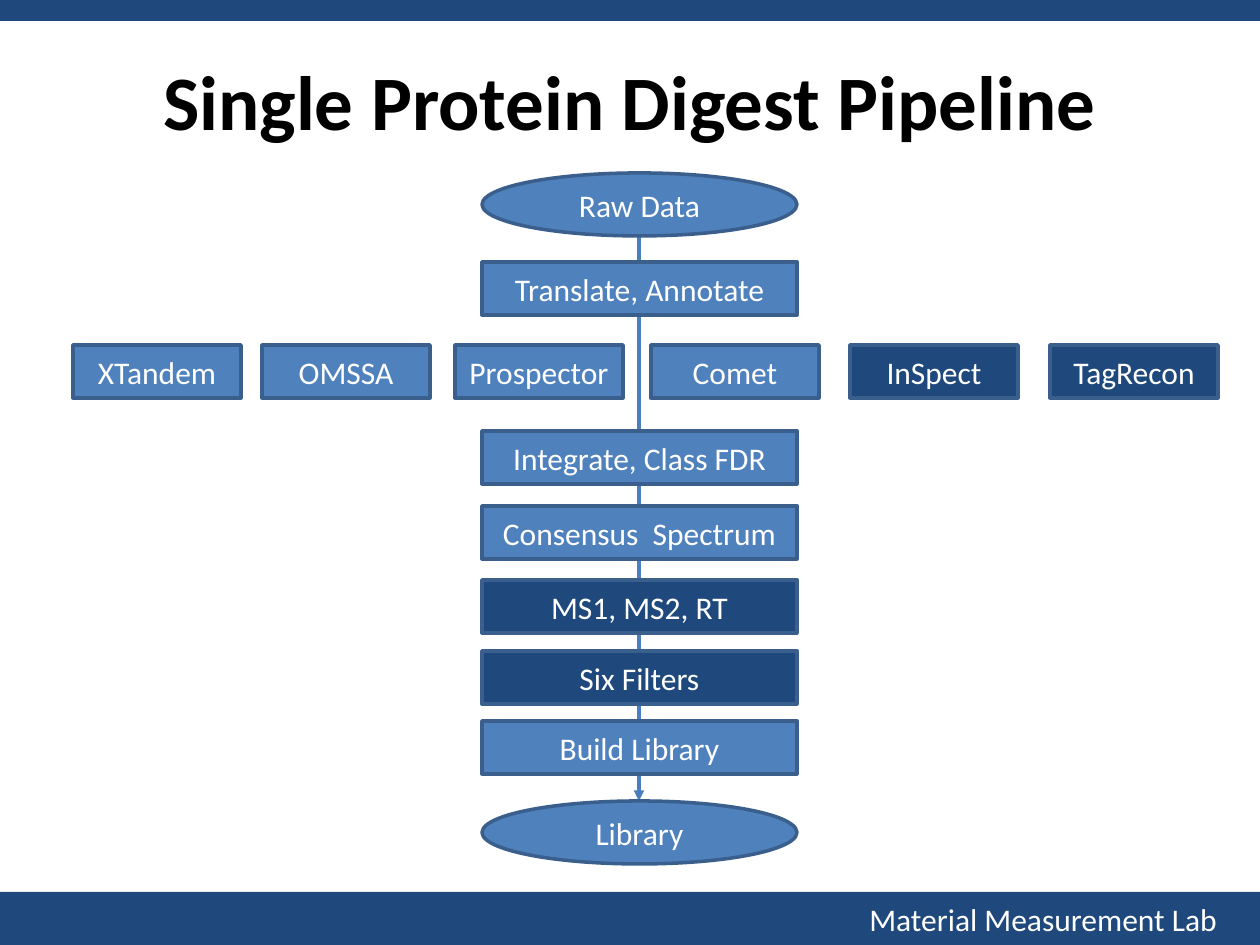
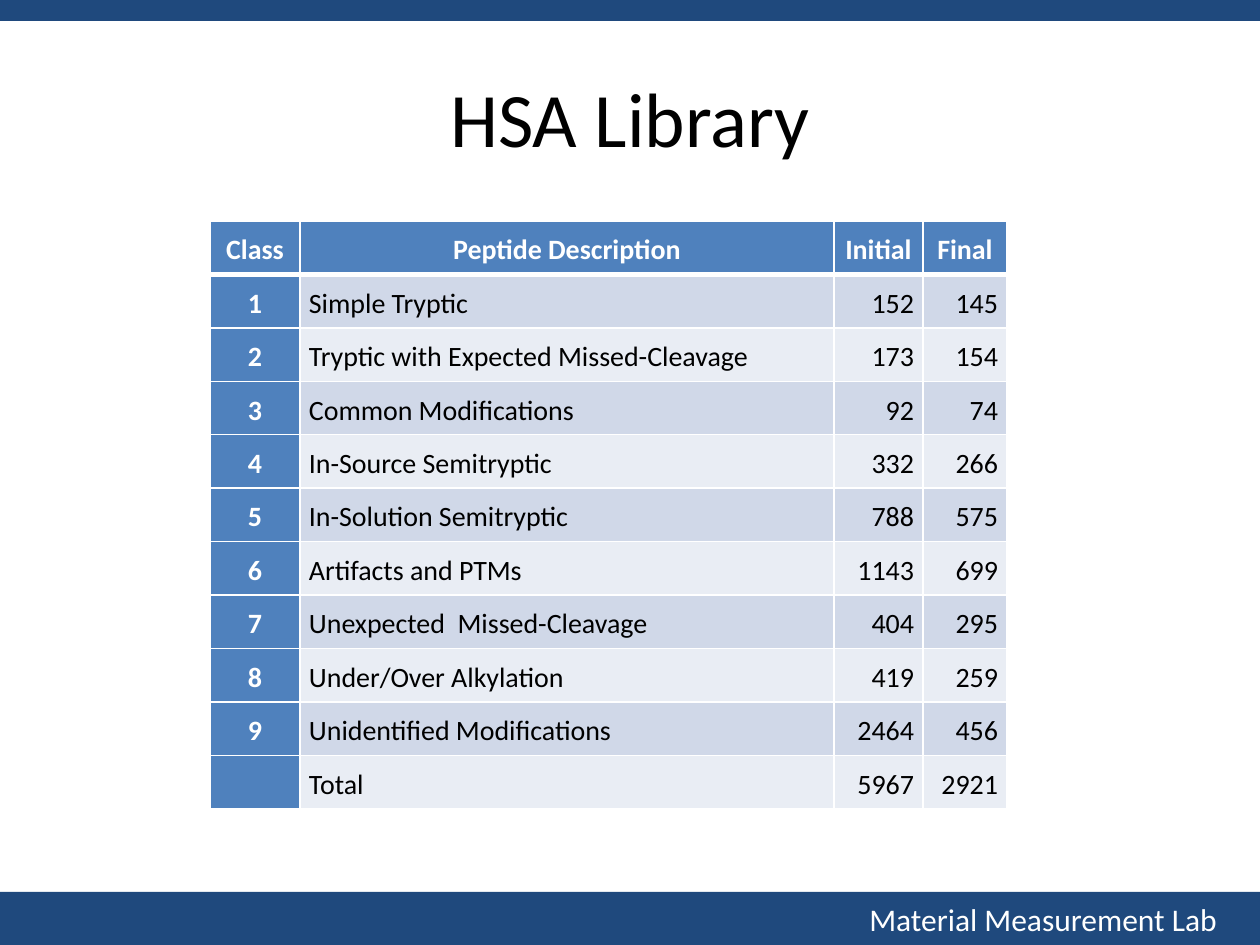
from lxml.etree import SubElement
from pptx import Presentation
from pptx.dml.color import RGBColor
from pptx.enum.shapes import MSO_CONNECTOR, MSO_SHAPE
from pptx.enum.text import MSO_ANCHOR, PP_ALIGN
from pptx.oxml.ns import qn
from pptx.util import Inches, Pt

PX_PER_INCH = 126
SLIDE_WIDTH, SLIDE_HEIGHT = 1260, 945
FONT = "Calibri"

NAVY = RGBColor(0x1F, 0x49, 0x7D)
BLUE = RGBColor(0x4F, 0x81, 0xBD)
OUTLINE = RGBColor(0x3A, 0x5F, 0x8C)
FLOW = RGBColor(0x4B, 0x7E, 0xBC)
ROW_DARK = RGBColor(0xD0, 0xD8, 0xE8)
ROW_LIGHT = RGBColor(0xE9, 0xED, 0xF4)
WHITE = RGBColor(0xFF, 0xFF, 0xFF)
BLACK = RGBColor(0, 0, 0)

STEP_LEFT, STEP_WIDTH, STEP_HEIGHT = 482, 315, 53
ELLIPSE_HEIGHT = 63
RAW_DATA_TOP, LIBRARY_TOP = 173, 801
FLOW_X = 639
STEPS = [
    ("Translate, Annotate", 262, BLUE),
    ("Integrate, Class FDR", 431, BLUE),
    ("Consensus  Spectrum", 506, BLUE),
    ("MS1, MS2, RT", 580, NAVY),
    ("Six Filters", 651, NAVY),
    ("Build Library", 721, BLUE),
]

ENGINE_TOP, ENGINE_WIDTH = 345, 168
ENGINES = [
    ("XTandem", 73, BLUE),
    ("OMSSA", 262, BLUE),
    ("Prospector", 455, BLUE),
    ("Comet", 651, BLUE),
    ("InSpect", 850, NAVY),
    ("TagRecon", 1050, NAVY),
]

COLUMN_WIDTHS = [90, 534, 89, 84]
COLUMN_ALIGNMENTS = [PP_ALIGN.CENTER, PP_ALIGN.LEFT, PP_ALIGN.RIGHT, PP_ALIGN.RIGHT]
PEPTIDE_ROWS = [
    ("Class", "Peptide Description", "Initial", "Final"),
    ("1", "Simple Tryptic", "152", "145"),
    ("2", "Tryptic with Expected Missed-Cleavage", "173", "154"),
    ("3", "Common Modifications", "92", "74"),
    ("4", "In-Source Semitryptic", "332", "266"),
    ("5", "In-Solution Semitryptic", "788", "575"),
    ("6", "Artifacts and PTMs", "1143", "699"),
    ("7", "Unexpected  Missed-Cleavage", "404", "295"),
    ("8", "Under/Over Alkylation", "419", "259"),
    ("9", "Unidentified Modifications", "2464", "456"),
    ("", "Total", "5967", "2921"),
]


def px(length):
    return round(length * Inches(1) / PX_PER_INCH)


def write(text_frame, text, size, color, alignment=PP_ALIGN.CENTER, bold=False):
    text_frame.word_wrap = True
    paragraph = text_frame.paragraphs[0]
    paragraph.text = text
    paragraph.alignment = alignment
    font = paragraph.font
    font.name, font.size, font.bold = FONT, Pt(size), bold
    font.color.rgb = color
    return paragraph


def add_block(slide, kind, left, top, width, height, fill):
    shape = slide.shapes.add_shape(kind, px(left), px(top), px(width), px(height))
    shape.shadow.inherit = False
    shape.fill.solid()
    shape.fill.fore_color.rgb = fill
    shape.line.fill.background()
    shape.text_frame.vertical_anchor = MSO_ANCHOR.MIDDLE
    return shape


def add_node(slide, text, left, top, width, height=STEP_HEIGHT, fill=BLUE,
             kind=MSO_SHAPE.RECTANGLE):
    node = add_block(slide, kind, left, top, width, height, fill)
    node.line.color.rgb = OUTLINE
    node.line.width = Pt(2)
    write(node.text_frame, text, 18, WHITE)


def add_arrow(slide, x, top, bottom):
    arrow = slide.shapes.add_connector(
        MSO_CONNECTOR.STRAIGHT, px(x), px(top), px(x), px(bottom))
    arrow.line.color.rgb = FLOW
    arrow.line.width = Pt(2)
    SubElement(arrow.line._get_or_add_ln(), qn("a:tailEnd"), type="triangle")
    SubElement(arrow._element.spPr, qn("a:effectLst"))


def add_base_slide(presentation, title, title_top, bold=False):
    """Add a slide with the shared bands, footer and title."""
    slide = presentation.slides.add_slide(presentation.slide_layouts[6])
    add_block(slide, MSO_SHAPE.RECTANGLE, 0, 0, SLIDE_WIDTH, 21, NAVY)
    footer = add_block(slide, MSO_SHAPE.RECTANGLE, 0, 892, SLIDE_WIDTH, 53, NAVY)
    footer.text_frame.margin_right = px(43)
    write(footer.text_frame, "Material Measurement Lab", 18, WHITE, PP_ALIGN.RIGHT)
    box = slide.shapes.add_textbox(px(63), px(title_top), px(1134), px(158))
    box.text_frame.vertical_anchor = MSO_ANCHOR.MIDDLE
    write(box.text_frame, title, 44, BLACK, bold=bold)
    return slide


def set_borders(cell, top, bottom):
    """Draw white borders; top and bottom widths are in points."""
    properties = cell._tc.get_or_add_tcPr()
    for side, width in (("L", 1), ("R", 1), ("T", top), ("B", bottom)):
        line = SubElement(properties, qn(f"a:ln{side}"), w=str(Pt(width)))
        fill = SubElement(line, qn("a:solidFill"))
        SubElement(fill, qn("a:srgbClr"), val=str(WHITE))


def fill_cell(cell, text, row, column):
    is_header = row == 0
    is_heading = is_header or column == 0
    set_borders(cell, top=3 if row == 1 else 1, bottom=3 if is_header else 1)
    cell.fill.solid()
    cell.fill.fore_color.rgb = BLUE if is_heading else ROW_DARK if row % 2 else ROW_LIGHT
    cell.vertical_anchor = MSO_ANCHOR.MIDDLE
    cell.margin_left = cell.margin_right = px(9)
    cell.margin_top = cell.margin_bottom = 0
    alignment = PP_ALIGN.CENTER if is_header else COLUMN_ALIGNMENTS[column]
    paragraph = write(cell.text_frame, text, 16, WHITE if is_heading else BLACK,
                      alignment, is_heading)
    paragraph.line_spacing = 1.15


def add_peptide_table(slide):
    table = slide.shapes.add_table(
        len(PEPTIDE_ROWS), len(COLUMN_WIDTHS),
        px(210), px(221), px(sum(COLUMN_WIDTHS)), px(588)).table
    for column, width in zip(table.columns, COLUMN_WIDTHS):
        column.width = px(width)
    for row, values in enumerate(PEPTIDE_ROWS):
        for column, text in enumerate(values):
            fill_cell(table.cell(row, column), text, row, column)


def add_pipeline(slide):
    add_arrow(slide, FLOW_X, RAW_DATA_TOP + ELLIPSE_HEIGHT, LIBRARY_TOP)
    for text, top in (("Raw Data", RAW_DATA_TOP), ("Library", LIBRARY_TOP)):
        add_node(slide, text, STEP_LEFT, top, STEP_WIDTH, ELLIPSE_HEIGHT,
                 kind=MSO_SHAPE.OVAL)
    for text, top, fill in STEPS:
        add_node(slide, text, STEP_LEFT, top, STEP_WIDTH, fill=fill)
    for text, left, fill in ENGINES:
        add_node(slide, text, left, ENGINE_TOP, ENGINE_WIDTH, fill=fill)


def main():
    presentation = Presentation()
    presentation.slide_width = px(SLIDE_WIDTH)
    presentation.slide_height = px(SLIDE_HEIGHT)
    add_pipeline(add_base_slide(presentation, "Single Protein Digest Pipeline", 21, bold=True))
    add_peptide_table(add_base_slide(presentation, "HSA Library", 38))
    presentation.save("out.pptx")


if __name__ == "__main__":
    main()
